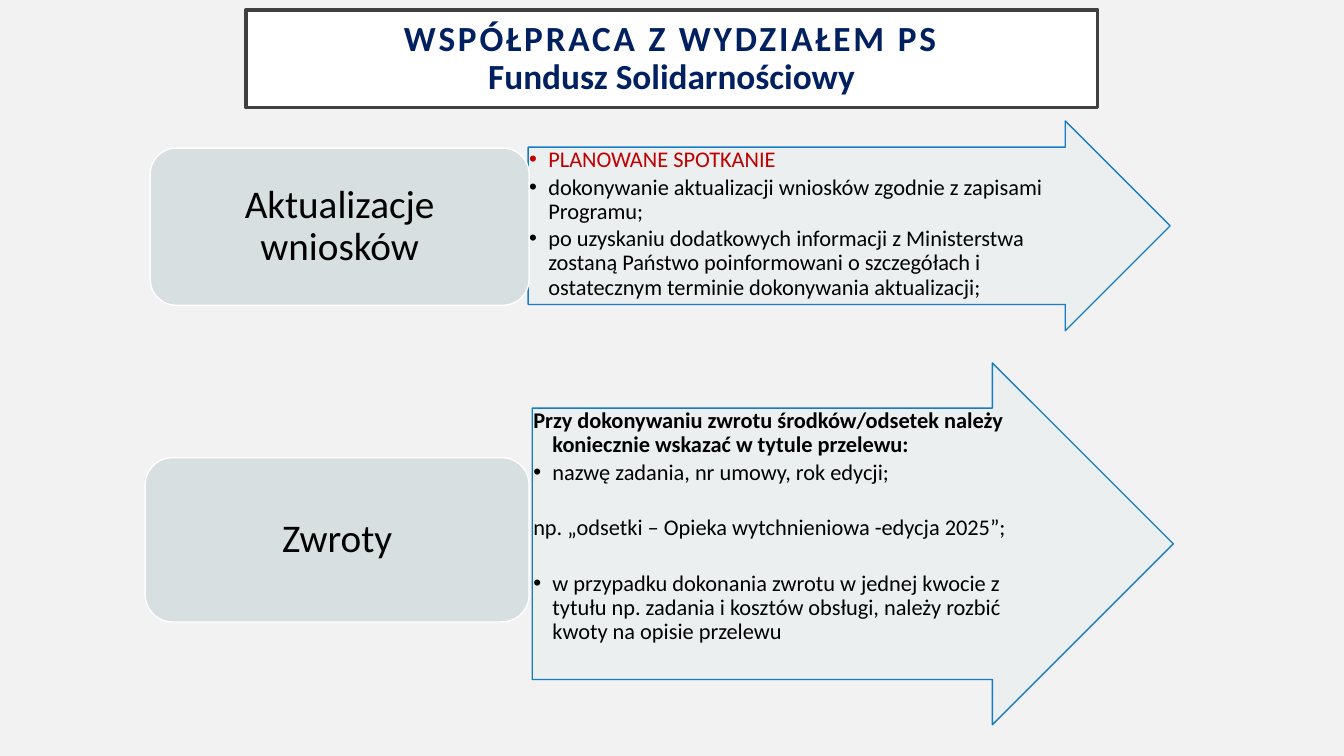
"""Build the slide on updating applications and returning funds."""
from dataclasses import dataclass

from pptx import Presentation
from pptx.dml.color import RGBColor
from pptx.enum.shapes import MSO_SHAPE as SHAPE
from pptx.enum.text import MSO_ANCHOR as ANCHOR, MSO_AUTO_SIZE as AUTO, PP_ALIGN as ALIGN
from pptx.oxml.ns import qn
from pptx.util import Pt

HEAD_SHARE = 0.5
SHAFT_SHARE = 0.75


@dataclass
class Box:
    left: float
    top: float
    width: float
    height: float

    def emu(self) -> list:
        return [Pt(v) for v in (self.left, self.top, self.width, self.height)]


@dataclass
class Item:
    text: str
    bullet: bool = True
    bold: bool = False
    color: str = "000000"
    before: float = 0


@dataclass
class Topic:
    label: str
    label_box: Box
    arrow_box: Box
    items: list[Item]


TITLE_BOX = Box(175.7, 7.2, 608.4, 69.8)
TOPICS = [
    Topic("Aktualizacje wniosków", Box(107.3, 105.8, 270.7, 112.3), Box(377.3, 86.4, 458.6, 149.8), [
        Item("PLANOWANE SPOTKANIE", color="C00000"),
        Item("dokonywanie aktualizacji wniosków zgodnie z zapisami Programu;"),
        Item("po uzyskaniu dodatkowych informacji z Ministerstwa zostaną Państwo poinformowani "
             "o szczegółach i ostatecznym terminie dokonywania aktualizacji;"),
    ]),
    Topic("Zwroty", Box(103.7, 326.9, 274.3, 117.4), Box(380.2, 259.2, 457.9, 258.5), [
        Item("Przy dokonywaniu zwrotu środków/odsetek należy koniecznie wskazać w tytule przelewu:",
             bullet=False, bold=True),
        Item("nazwę zadania, nr umowy, rok edycji;"),
        Item("np. „odsetki – Opieka wytchnieniowa -edycja 2025”;", bullet=False, before=20),
        Item("w przypadku dokonania zwrotu w jednej kwocie z tytułu np. zadania i kosztów obsługi, "
             "należy rozbić kwoty na opisie przelewu", before=20),
    ]),
]


def rgb(color: str) -> RGBColor:
    return RGBColor.from_string(color)


def apply(obj, values: dict) -> None:
    for name, value in values.items():
        setattr(obj, name, value)


def paint(sp, fill: str, line: str, weight: float) -> None:
    sp.fill.solid()
    sp.fill.fore_color.rgb = rgb(fill)
    sp.line.color.rgb = rgb(line)
    sp.line.width = Pt(weight)


def place(sp, box: Box) -> None:
    apply(sp, dict(zip(("left", "top", "width", "height"), box.emu())))


def frame(tf, anchor: ANCHOR, side: float, edge: float) -> None:
    apply(tf, {"word_wrap": True, "auto_size": AUTO.NONE, "vertical_anchor": anchor,
               "margin_left": Pt(side), "margin_right": Pt(side),
               "margin_top": Pt(edge), "margin_bottom": Pt(edge)})


def add_run(p, text: str, size: float, color: str, bold: bool = False):
    r = p.add_run()
    r.text = text
    apply(r.font, {"name": "Calibri", "size": Pt(size), "bold": bold})
    r.font.color.rgb = rgb(color)
    return r


def add_title(sp) -> None:
    place(sp, TITLE_BOX)
    paint(sp, "FFFFFF", "404040", 2.5)
    frame(sp.text_frame, ANCHOR.MIDDLE, 14.4, 14.4)
    p = sp.text_frame.paragraphs[0]
    apply(p, {"alignment": ALIGN.CENTER, "line_spacing": 0.9})
    r = add_run(p, "WSPÓŁPRACA Z WYDZIAŁEM PS", 25.2, "002060", True)
    r.font._element.set("spc", "200")
    p.add_line_break()
    add_run(p, "Fundusz Solidarnościowy", 25.2, "002060", True)


def add_shape(s, kind: SHAPE, box: Box, fill: str, line: str):
    sp = s.shapes.add_shape(kind, *box.emu())
    sp.shadow.inherit = False
    paint(sp, fill, line, 1)
    return sp


def add_arrow(s, box: Box) -> None:
    sp = add_shape(s, SHAPE.RIGHT_ARROW, box, "EBEFF0", "0070C0")
    sp.adjustments[0] = SHAFT_SHARE
    sp.adjustments[1] = HEAD_SHARE
    for clr in sp._element.spPr.iter(qn("a:srgbClr")):
        clr.makeelement(qn("a:alpha"), {"val": "90000"})
        clr.append(clr.makeelement(qn("a:alpha"), {"val": "90000"}))


def add_list(s, sp, arrow: Box, items: list[Item]) -> None:
    s.shapes._spTree.append(sp._element)
    shaft = SHAFT_SHARE * arrow.height
    place(sp, Box(arrow.left, arrow.top + (arrow.height - shaft) / 2,
                  arrow.width - shaft * HEAD_SHARE, shaft))
    tf = sp.text_frame
    frame(tf, ANCHOR.TOP, 0.7, 0.7)
    for i, item in enumerate(items):
        p = tf.add_paragraph() if i else tf.paragraphs[0]
        apply(p, {"alignment": ALIGN.LEFT, "line_spacing": 0.9,
                  "space_before": Pt(item.before), "space_after": Pt(2.4)})
        pPr = p._p.get_or_add_pPr()
        pPr.set("marL", str(Pt(13.7)))
        pPr.set("indent", str(-Pt(13.7)))
        tag, attrs = ("a:buChar", {"char": "•"}) if item.bullet else ("a:buNone", {})
        pPr.append(pPr.makeelement(qn(tag), attrs))
        add_run(p, item.text, 16, item.color, item.bold)


def add_label(s, topic: Topic) -> None:
    sp = add_shape(s, SHAPE.ROUNDED_RECTANGLE, topic.label_box, "D7DFE1", "FFFFFF")
    frame(sp.text_frame, ANCHOR.MIDDLE, 8.6, 4.3)
    p = sp.text_frame.paragraphs[0]
    apply(p, {"alignment": ALIGN.CENTER, "line_spacing": 0.9})
    add_run(p, topic.label, 28, "000000")


def main() -> None:
    prs = Presentation()
    apply(prs, {"slide_width": Pt(960), "slide_height": Pt(540)})
    s = prs.slides.add_slide(prs.slide_layouts.get_by_name("Two Content"))
    s.background.fill.solid()
    s.background.fill.fore_color.rgb = rgb("F2F2F2")
    title, *bodies = list(s.placeholders)[:3]
    add_title(title)
    for topic, body in zip(TOPICS, bodies):
        add_arrow(s, topic.arrow_box)
        add_list(s, body, topic.arrow_box, topic.items)
        add_label(s, topic)
    prs.save("out.pptx")


if __name__ == "__main__":
    main()
